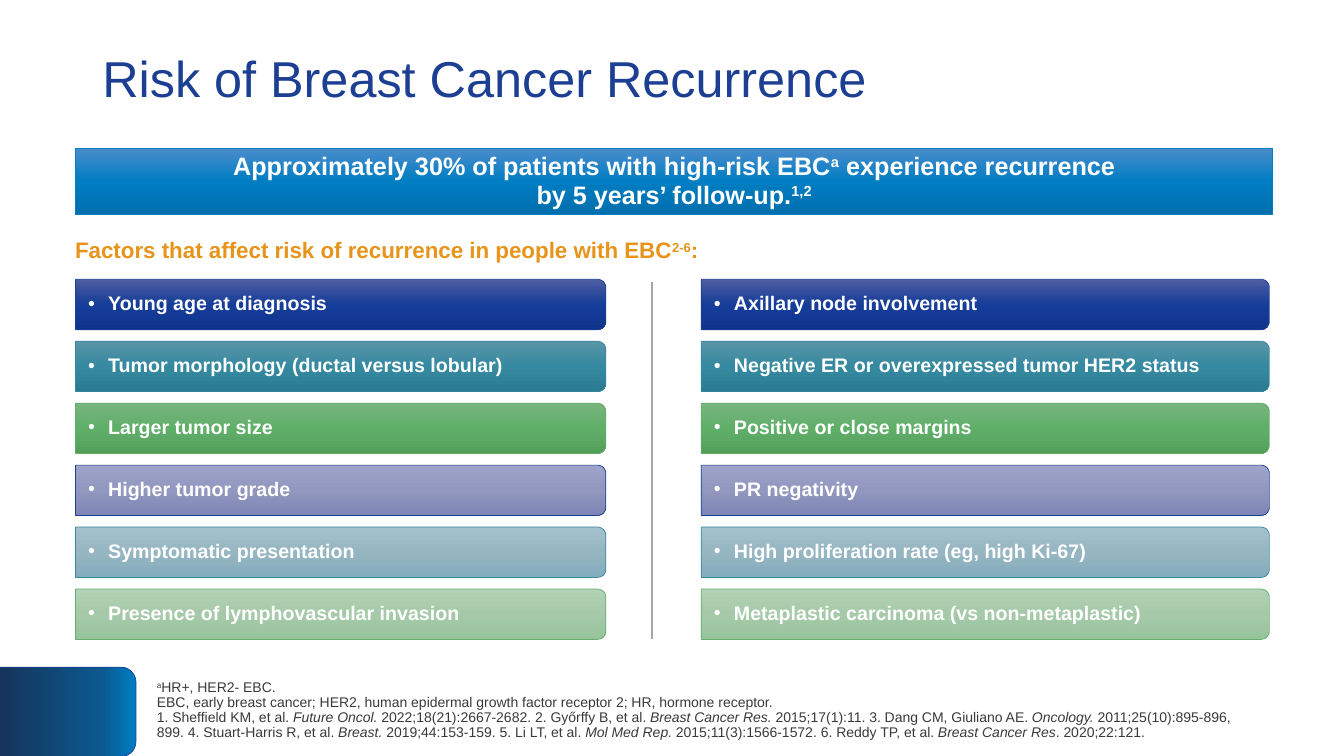
from math import cos, pi, sin

from lxml.etree import SubElement
from pptx import Presentation
from pptx.dml.color import RGBColor
from pptx.enum.shapes import MSO_CONNECTOR, MSO_SHAPE
from pptx.enum.text import MSO_ANCHOR, PP_ALIGN
from pptx.oxml.ns import qn
from pptx.util import Pt

PX = 9525  # 96 px to the inch
rgb = RGBColor.from_string


def paint(shape, stops, edge):
    """Gradient fill, thin outline, no shadow."""
    shape.shadow.inherit = False
    shape.fill.gradient()
    shape.fill.gradient_angle = 270
    ramp = shape._element.spPr.find(qn("a:gradFill")).find(qn("a:gsLst"))
    for old in list(ramp):
        ramp.remove(old)
    for pos, tint in stops:
        stop = SubElement(ramp, qn("a:gs"), pos=str(pos * 1000))
        SubElement(stop, qn("a:srgbClr"), val=tint)
    shape.line.color.rgb = rgb(edge)
    shape.line.width = Pt(0.5)


def write(shape, parts, size, color, bold=False, align=PP_ALIGN.LEFT,
          space=1.0, anchor=MSO_ANCHOR.MIDDLE):
    """Fill one paragraph from (text, style) parts; style is "", "sup" or "it"."""
    frame = shape.text_frame
    frame.word_wrap = True
    frame.vertical_anchor = anchor
    para = frame.paragraphs[0]
    para.alignment = align
    para.line_spacing = space
    font = para.font
    font.name, font.size, font.bold = "Arial", Pt(size), bold
    font.color.rgb = rgb(color)
    for text, style in parts:
        for row, line in enumerate(text.split("\n")):
            if row:
                para.add_line_break()
            run = para.add_run()
            run.text = line
            if style == "sup":
                run.font._element.set("baseline", "30000")
            elif style == "it":
                run.font.italic = True


deck = Presentation()
deck.slide_width, deck.slide_height = 1280 * PX, 720 * PX
shapes = deck.slides.add_slide(deck.slide_layouts[6]).shapes

# Corner tab
tab = shapes.add_shape(MSO_SHAPE.ROUND_2_SAME_RECTANGLE,
                       22 * PX, 613 * PX, 85 * PX, 130 * PX)
tab.rotation = 90
paint(tab, [(0, "007DC3"), (25, "0B598F"), (100, "15345A")], "1C3F93")

# Title
title = shapes.add_textbox(88 * PX, 38 * PX, 1104 * PX, 79 * PX)
write(title, [("Risk of Breast Cancer Recurrence", "")], 36, "1C3F93", space=0.9)

# Footnotes and references
notes = shapes.add_textbox(140 * PX, 643 * PX, 1071 * PX, 77 * PX)
write(notes, [
    ("a", "sup"),
    ("HR+, HER2- EBC. \n"
     "EBC, early breast cancer; HER2, human epidermal growth factor receptor 2; "
     "HR, hormone receptor. \n"
     "1. Sheffield KM, et al. ", ""),
    ("Future Oncol. ", "it"),
    ("2022;18(21):2667-2682. 2. Győrffy B, et al. ", ""),
    ("Breast Cancer Res. ", "it"),
    ("2015;17(1):11. 3. Dang CM, Giuliano AE. ", ""),
    ("Oncology. ", "it"),
    ("2011;25(10):895-896, 899. 4. Stuart-Harris R, et al. ", ""),
    ("Breast. ", "it"),
    ("2019;44:153-159. 5. Li LT, et al. ", ""),
    ("Mol Med Rep. ", "it"),
    ("2015;11(3):1566-1572. 6. Reddy TP, et al. ", ""),
    ("Breast Cancer Res", "it"),
    (". 2020;22:121.", ""),
], 10, "3A3A3A", space=0.9, anchor=MSO_ANCHOR.TOP)

# Banner
banner = shapes.add_shape(MSO_SHAPE.RECTANGLE,
                          72 * PX, 141 * PX, 1140 * PX, 63 * PX)
paint(banner, [(0, "4B8CCB"), (50, "007DC3"), (100, "006FAD")], "007DC3")
banner.text_frame.margin_top = banner.text_frame.margin_bottom = 4 * PX
write(banner, [
    ("Approximately 30% of patients with high-risk EBC", ""),
    ("a", "sup"),
    (" experience recurrence\nby 5 years’ follow-up.", ""),
    ("1,2", "sup"),
], 18, "FFFFFF", True, PP_ALIGN.CENTER, 0.95)

# Heading above the factors
head = shapes.add_textbox(62 * PX, 215 * PX, 1172 * PX, 46 * PX)
write(head, [
    ("Factors that affect risk of recurrence in people with EBC", ""),
    ("2-6", "sup"),
    (":", ""),
], 16, "E8931A", True)

# Factor bars: square on the left, rounded on the right
tints = [
    ("4E5DA1", "163D99", "0E348D", "1C3F93"),
    ("5A94A7", "3589A0", "2B7C92", "3A869B"),
    ("78B47E", "60AF69", "529F5A", "64AB6C"),
    ("9EA4C9", "9197BE", "7D85B7", "1C3F93"),
    ("A3C1CD", "96B6C2", "83ACBC", "3A869B"),
    ("B2D2B5", "A6CAA9", "96C49B", "64AB6C"),
]
sides = [
    (72, 505, ["Young age at diagnosis",
               "Tumor morphology (ductal versus lobular)",
               "Larger tumor size",
               "Higher tumor grade",
               "Symptomatic presentation",
               "Presence of lymphovascular invasion"]),
    (668, 541, ["Axillary node involvement",
                "Negative ER or overexpressed tumor HER2 status",
                "Positive or close margins",
                "PR negativity",
                "High proliferation rate (eg, high Ki-67)",
                "Metaplastic carcinoma (vs non-metaplastic)"]),
]
TOP, STEP, HIGH, CURVE = 266, 59, 48, 8
turns = [pi / 2 * n / 8 for n in range(9)]

for left, width, labels in sides:
    for row, (label, (light, mid, dark, edge)) in enumerate(zip(labels, tints)):
        top = TOP + row * STEP
        hub = left + width - CURVE
        upper = [(hub + CURVE * sin(t), top + CURVE - CURVE * cos(t)) for t in turns]
        lower = [(x, 2 * top + HIGH - y) for x, y in reversed(upper)]
        points = upper + lower + [(left, top + HIGH)]
        pen = shapes.build_freeform(left * PX, top * PX)
        pen.add_line_segments([(x * PX, y * PX) for x, y in points])
        bar = pen.convert_to_shape()
        paint(bar, [(0, light), (50, mid), (100, dark)], edge)
        frame = bar.text_frame
        frame.margin_left = 12 * PX
        frame.margin_right = frame.margin_top = frame.margin_bottom = 4 * PX
        props = frame.paragraphs[0]._p.get_or_add_pPr()
        props.set("marL", str(19 * PX))
        props.set("indent", str(-19 * PX))
        SubElement(SubElement(props, qn("a:buClr")), qn("a:srgbClr"), val="FFFFFF")
        SubElement(props, qn("a:buFont"), typeface="Arial")
        SubElement(props, qn("a:buChar"), char="•")
        write(bar, [(label, "")], 14, "FFFFFF", True, space=0.9)

# Divider between the columns
rule = shapes.add_connector(MSO_CONNECTOR.STRAIGHT,
                            621 * PX, 269 * PX, 621 * PX, 609 * PX)
rule.line.color.rgb = rgb("A6A6A6")
rule.line.width = Pt(1.5)
SubElement(rule._element.spPr, qn("a:effectLst"))

deck.save("out.pptx")
